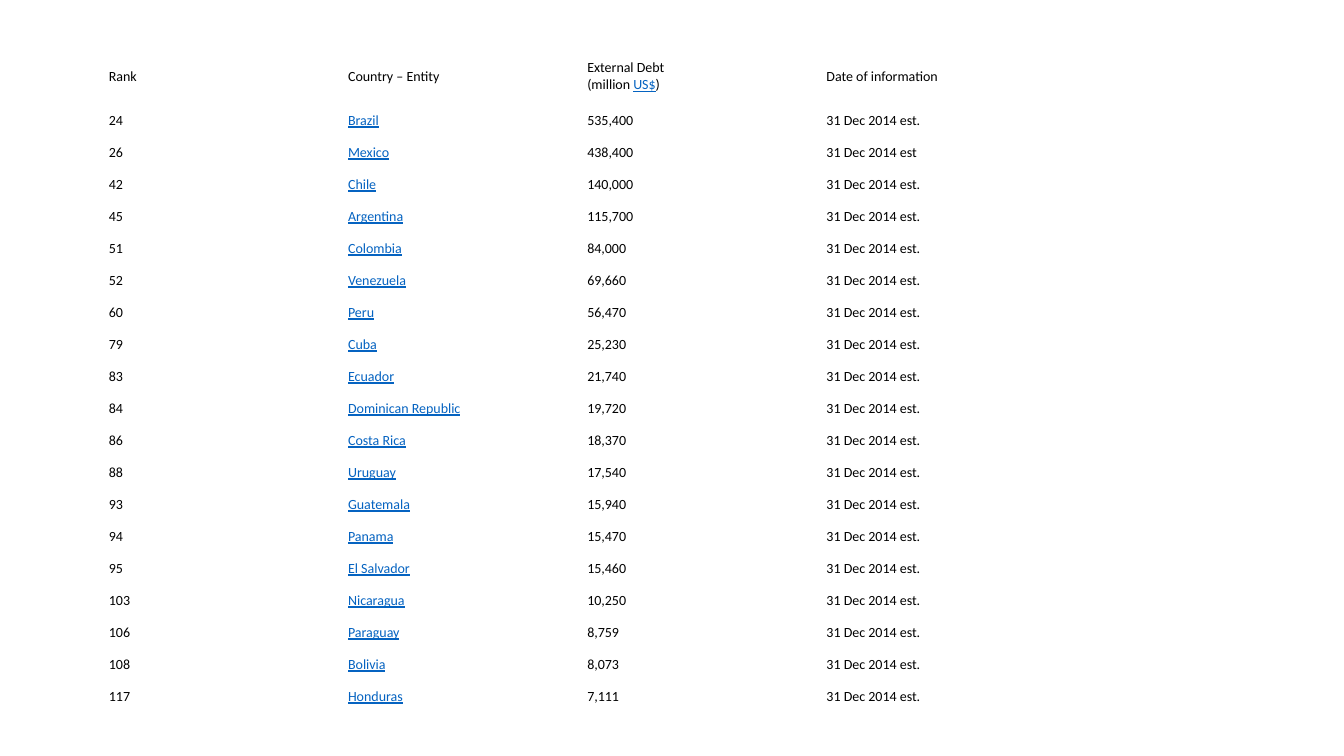
from pptx import Presentation
from pptx import util as u
from pptx.dml.color import RGBColor
from pptx.enum import text

BLACK, LINK_BLUE = "000000", "0563C1"
LEFT, TOP, WIDTH, HEIGHT = 1.02, 0.48, 9.49, 6.59
HEADER_HEIGHT = 0.56

header = ["Rank", "Country – Entity", "External Debt\n(million |US$|)", "Date of information"]
debts = [
    ("24", "Brazil", "535,400"),
    ("26", "Mexico", "438,400"),
    ("42", "Chile", "140,000"),
    ("45", "Argentina", "115,700"),
    ("51", "Colombia", "84,000"),
    ("52", "Venezuela", "69,660"),
    ("60", "Peru", "56,470"),
    ("79", "Cuba", "25,230"),
    ("83", "Ecuador", "21,740"),
    ("84", "Dominican Republic", "19,720"),
    ("86", "Costa Rica", "18,370"),
    ("88", "Uruguay", "17,540"),
    ("93", "Guatemala", "15,940"),
    ("94", "Panama", "15,470"),
    ("95", "El Salvador", "15,460"),
    ("103", "Nicaragua", "10,250"),
    ("106", "Paraguay", "8,759"),
    ("108", "Bolivia", "8,073"),
    ("117", "Honduras", "7,111"),
]


def paint(font, color):
    font.color.rgb = RGBColor.from_string(color)


def fill_cell(cell, content):
    """Write content into a cell; parts between bars look like links."""
    cell.fill.background()
    cell.vertical_anchor = text.MSO_ANCHOR.MIDDLE
    cell.margin_left = cell.margin_right = u.Inches(0.06)
    cell.margin_top = cell.margin_bottom = u.Inches(0.03)
    para = cell.text_frame.paragraphs[0]
    para.font.name, para.font.size = "Calibri", u.Pt(10)
    for part, words in enumerate(content.split("|")):
        for line, piece in enumerate(words.split("\n")):
            if line:
                para.add_line_break()
            if piece:
                span = para.add_run()
                span.text = piece
                span.font.name, span.font.size = "Calibri", u.Pt(10)
                linked = part % 2 == 1
                span.font.underline = linked
                paint(span.font, LINK_BLUE if linked else BLACK)


# Deck and blank page
deck = Presentation()
deck.slide_width, deck.slide_height = u.Inches(13.33), u.Inches(7.5)
page = deck.slides.add_slide(deck.slide_layouts[6])

# Table content: every country is a link, every date but Mexico's ends in a full stop
rows = [header]
for rank, country, debt in debts:
    date = "31 Dec 2014 est" if country == "Mexico" else "31 Dec 2014 est."
    rows.append([rank, f"|{country}|", debt, date])

# Table grid: equal columns, a taller header, equal body rows
table = page.shapes.add_table(
    len(rows), len(header), u.Inches(LEFT), u.Inches(TOP), u.Inches(WIDTH), u.Inches(HEIGHT)
).table
table.first_row = table.horz_banding = False
for column in table.columns:
    column.width = u.Inches(WIDTH / len(header))
for row in table.rows:
    row.height = u.Inches((HEIGHT - HEADER_HEIGHT) / len(debts))
table.rows[0].height = u.Inches(HEADER_HEIGHT)

# Cells
for r, row in enumerate(rows):
    for c, content in enumerate(row):
        fill_cell(table.cell(r, c), content)

deck.save("out.pptx")
